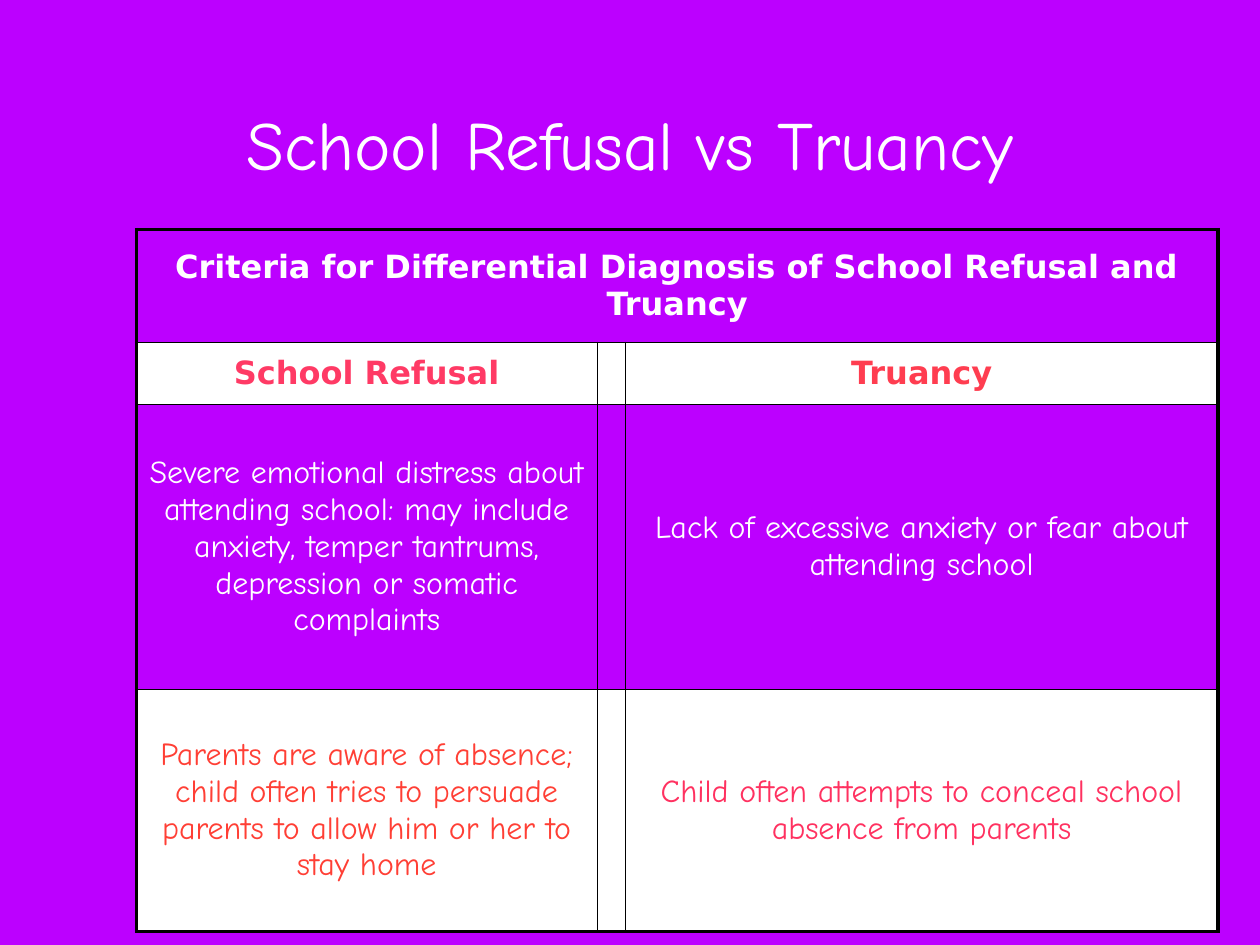
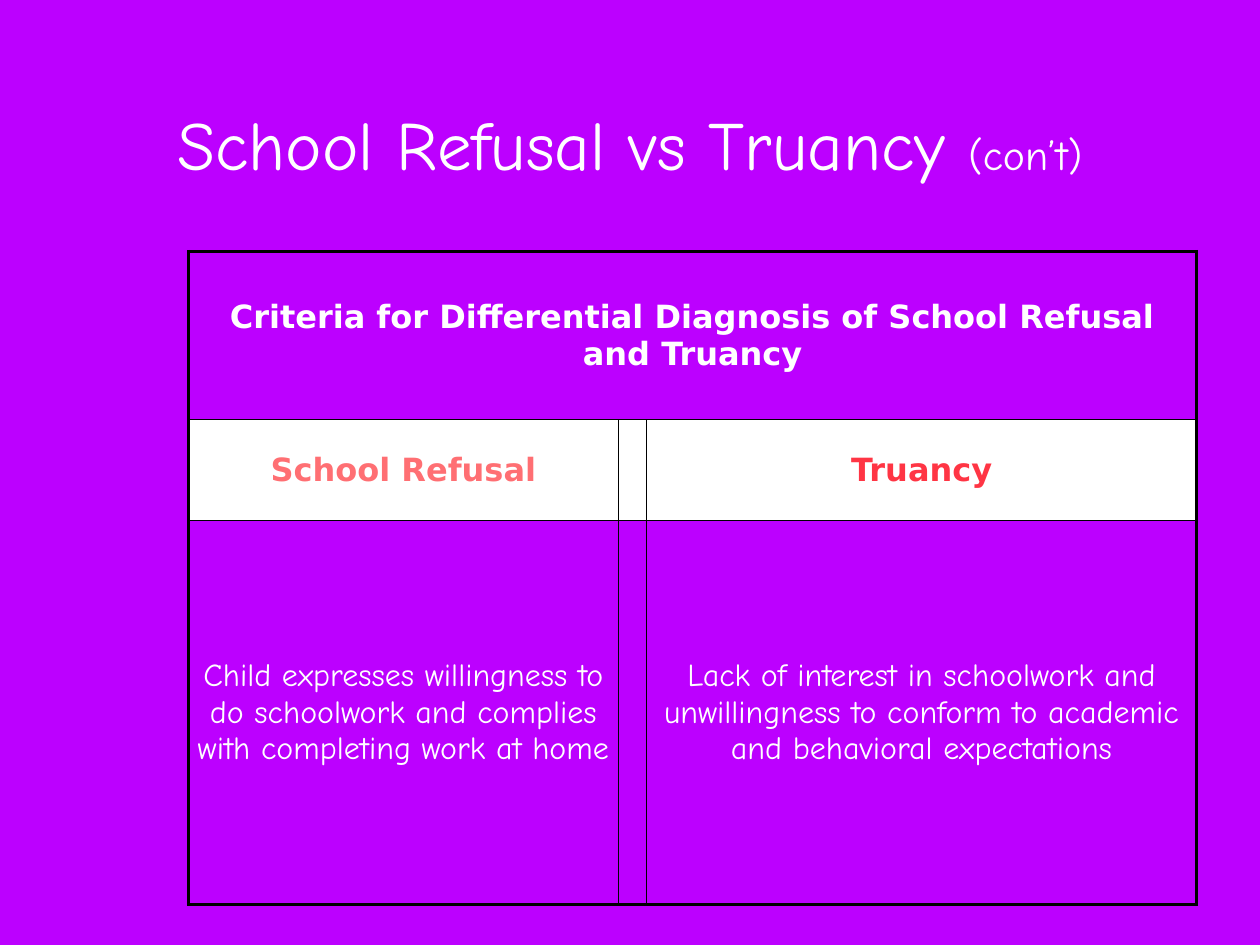
from dataclasses import dataclass

from lxml.etree import SubElement
from pptx import Presentation
from pptx.dml.color import RGBColor
from pptx.enum.text import MSO_ANCHOR, MSO_AUTO_SIZE, PP_ALIGN
from pptx.oxml.ns import qn
from pptx.util import Cm, Pt


@dataclass(frozen=True)
class Theme:
    purple: str = "BC00FF"
    white: str = "FFFFFF"
    black: str = "000000"
    body_font: str = "Comic Neue"
    head_font: str = "DejaVu Sans"
    title_size: int = 56
    suffix_size: int = 34
    cell_size: int = 26
    outer_line: int = 3
    inner_line: int = 1


THEME = Theme()
TITLE_BOX = (3.53, 0.56, 29.06, 7.06)
TITLE = "School Refusal vs Truancy"
CAPTION = "Criteria for Differential Diagnosis of School Refusal and Truancy"
HEADS = ("School Refusal", "Truancy")


def add_text(p, text, size=THEME.cell_size, font=THEME.body_font,
             color=THEME.white, bold=False):
    p.alignment = PP_ALIGN.CENTER
    r = p.add_run()
    r.text = text
    r.font.size = Pt(size)
    r.font.name = font
    r.font.bold = bold
    r.font.color.rgb = RGBColor.from_string(color)


def set_borders(cell, **widths):
    """Draw cell borders; widths are points keyed by L, R, T and B."""
    tc_pr = cell._tc.get_or_add_tcPr()
    for side, width in widths.items():
        ln = SubElement(tc_pr, qn(f"a:ln{side}"), w=str(Pt(width)))
        fill = SubElement(ln, qn("a:solidFill"))
        SubElement(fill, qn("a:srgbClr"), val=THEME.black)


def style_cell(cell, white):
    cell.vertical_anchor = MSO_ANCHOR.MIDDLE
    cell.margin_left = cell.margin_right = Cm(0.13)
    cell.margin_top = cell.margin_bottom = Cm(0.13)
    if white:
        cell.fill.solid()
        cell.fill.fore_color.rgb = RGBColor.from_string(THEME.white)
    else:
        cell.fill.background()


def setup_master(prs):
    fill = prs.slide_master.background.fill
    fill.solid()
    fill.fore_color.rgb = RGBColor.from_string(THEME.purple)


def add_title(s, box, suffix=""):
    sp = s.shapes.title
    sp.left, sp.top, sp.width, sp.height = map(Cm, box)
    tf = sp.text_frame
    tf.auto_size = MSO_AUTO_SIZE.NONE
    tf.vertical_anchor = MSO_ANCHOR.MIDDLE
    tf.margin_left = tf.margin_right = Cm(0.15)
    tf.margin_top = tf.margin_bottom = Cm(0.15)
    p = tf.paragraphs[0]
    add_text(p, TITLE + (" " if suffix else ""), size=THEME.title_size)
    if suffix:
        add_text(p, suffix, size=THEME.suffix_size)


def add_criteria_table(s, left, top, widths, heights, head_colors, criteria):
    """Caption row, heading row, then pairs of (text, colour) round a narrow gap;
    every second row is white."""
    frame = s.shapes.add_table(len(heights), len(widths), Cm(left), Cm(top),
                               Cm(sum(widths)), Cm(sum(heights)))
    table = frame.table
    table.first_row = table.horz_banding = False
    for col, width in zip(table.columns, widths):
        col.width = Cm(width)
    for row, height in zip(table.rows, heights):
        row.height = Cm(height)

    last_row, last_col = len(heights) - 1, len(widths) - 1
    for i, row in enumerate(table.rows):
        for j, cell in enumerate(row.cells):
            edges = {"L": j == 0 or i == 0, "R": j == last_col or i == 0,
                     "T": i == 0, "B": i == last_row}
            set_borders(cell, **{side: THEME.outer_line if outer else THEME.inner_line
                                 for side, outer in edges.items()})
            style_cell(cell, white=i % 2 == 1)

    caption = table.cell(0, 0)
    caption.merge(table.cell(0, last_col))
    head = dict(font=THEME.head_font, bold=True)
    add_text(caption.text_frame.paragraphs[0], CAPTION, **head)
    for i, pair in enumerate([tuple(zip(HEADS, head_colors)), *criteria], start=1):
        for j, (text, color) in zip((0, last_col), pair):
            p = table.cell(i, j).text_frame.paragraphs[0]
            add_text(p, text, color=color, **(head if i == 1 else {}))


def add_comparison_slide(prs, suffix="", **table):
    s = prs.slides.add_slide(prs.slide_layouts.get_by_name("Title Only"))
    add_title(s, TITLE_BOX, suffix)
    add_criteria_table(s, **table)


def main():
    prs = Presentation()
    prs.slide_width, prs.slide_height = Cm(36.12), Cm(27.1)
    setup_master(prs)
    add_comparison_slide(
        prs, left=3.91, top=6.58,
        widths=(13.21, 0.81, 16.99), heights=(3.23, 1.8, 8.15, 6.96),
        head_colors=("FF3A65", "FF3D50"),
        criteria=[
            (("Severe emotional distress about attending school: may include anxiety, "
              "temper tantrums, depression or somatic complaints", THEME.white),
             ("Lack of excessive anxiety or fear about attending school", THEME.white)),
            (("Parents are aware of absence; child often tries to persuade parents "
              "to allow him or her to stay home", "FF3F35"),
             ("Child often attempts to conceal school absence from parents", "FF3160")),
        ])
    add_comparison_slide(
        prs, suffix="(con’t)", left=5.41, top=7.21,
        widths=(12.32, 0.81, 15.77), heights=(4.83, 2.9, 11),
        head_colors=("FF6F73", "FF3544"),
        criteria=[
            (("Child expresses willingness to do schoolwork and complies with "
              "completing work at home", THEME.white),
             ("Lack of interest in schoolwork and unwillingness to conform to academic "
              "and behavioral expectations", THEME.white)),
        ])
    prs.save("out.pptx")


if __name__ == "__main__":
    main()
